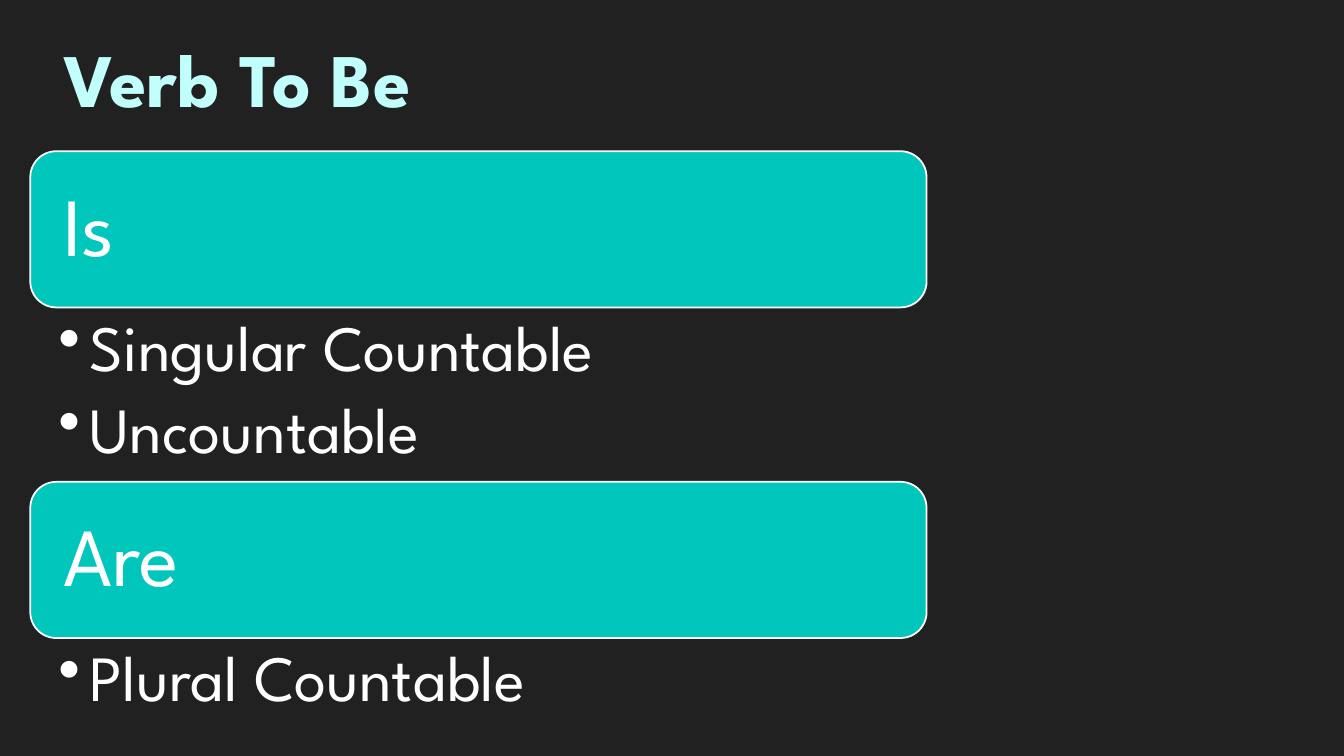
from dataclasses import dataclass

from lxml import etree
from pptx import Presentation
from pptx.dml.color import RGBColor
from pptx.enum.shapes import MSO_SHAPE
from pptx.enum.text import MSO_ANCHOR, MSO_AUTO_SIZE, PP_ALIGN
from pptx.oxml.ns import qn
from pptx.util import Inches, Pt

ROUNDED = MSO_SHAPE.ROUNDED_RECTANGLE
MIDDLE, TOP = MSO_ANCHOR.MIDDLE, MSO_ANCHOR.TOP
FIT_SHAPE = MSO_AUTO_SIZE.SHAPE_TO_FIT_TEXT
CENTER, LEFT_ALIGN = PP_ALIGN.CENTER, PP_ALIGN.LEFT

COLORS = {"background": "212121", "teal": "00C6BB", "mint": "C1FFFC", "white": "FFFFFF"}
FONT = "League Spartan"
LEFT, WIDTH, FIRST_TOP = 0.3, 8.89, 1.5
HEADING_HEIGHT = 1.55
BULLET_INDENT = 0.31


@dataclass
class VerbForm:
    heading: str
    uses: list[str]
    uses_height: float


VERB_FORMS = [
    VerbForm("Is", ["Singular Countable", "Uncountable"], 1.73),
    VerbForm("Are", ["Plural Countable"], 1.07),
]


def color(name: str) -> RGBColor:
    return RGBColor.from_string(COLORS[name])


def add_run(paragraph, text: str, size: float, color_name: str, bold: bool = False) -> None:
    run = paragraph.add_run()
    run.text = text
    run.font.name = FONT
    run.font.size = Pt(size)
    run.font.bold = bold
    run.font.color.rgb = color(color_name)


def set_insets(frame, left: float, top: float, right: float, bottom: float) -> None:
    frame.margin_left, frame.margin_top = Inches(left), Inches(top)
    frame.margin_right, frame.margin_bottom = Inches(right), Inches(bottom)


def set_spacing(paragraph, after_percent: int) -> None:
    paragraph.alignment = LEFT_ALIGN
    paragraph.line_spacing = 0.9
    after = etree.SubElement(paragraph._p.get_or_add_pPr(), qn("a:spcAft"))
    etree.SubElement(after, qn("a:spcPct"), val=str(after_percent * 1000))


def set_bullet(paragraph) -> None:
    properties = paragraph._p.get_or_add_pPr()
    properties.set("marL", str(Inches(BULLET_INDENT)))
    properties.set("indent", str(-Inches(BULLET_INDENT)))
    etree.SubElement(properties, qn("a:buChar"), char="•")


def add_title(slide, text: str) -> None:
    title = slide.shapes.add_textbox(Inches(LEFT), Inches(0.27), Inches(4.11), Inches(1.01))
    frame = title.text_frame
    frame.word_wrap = False
    frame.auto_size = FIT_SHAPE
    frame.paragraphs[0].alignment = CENTER
    add_run(frame.paragraphs[0], text, 54, "mint", bold=True)


def add_heading(slide, text: str, top: float) -> None:
    heading = slide.shapes.add_shape(
        ROUNDED, Inches(LEFT), Inches(top), Inches(WIDTH), Inches(HEADING_HEIGHT)
    )
    heading.shadow.inherit = False
    heading.fill.solid()
    heading.fill.fore_color.rgb = color("teal")
    heading.line.color.rgb = color("white")
    heading.line.width = Pt(1.25)
    frame = heading.text_frame
    frame.word_wrap = True
    frame.vertical_anchor = MIDDLE
    set_insets(frame, 0.25, 0.25, 0.25, 0.25)
    set_spacing(frame.paragraphs[0], 35)
    add_run(frame.paragraphs[0], text, 59, "white")


def add_uses(slide, uses: list[str], top: float, height: float) -> None:
    listing = slide.shapes.add_textbox(Inches(LEFT), Inches(top), Inches(WIDTH), Inches(height))
    frame = listing.text_frame
    frame.word_wrap = True
    frame.vertical_anchor = TOP
    set_insets(frame, 0.28, 0.08, 0.46, 0.08)
    for index, use in enumerate(uses):
        paragraph = frame.add_paragraph() if index else frame.paragraphs[0]
        paragraph.level = 1
        set_spacing(paragraph, 20)
        set_bullet(paragraph)
        add_run(paragraph, use, 46, "white")


def main() -> None:
    """Build the slide on the forms of the verb to be."""
    presentation = Presentation()
    presentation.slide_width, presentation.slide_height = Inches(13.33), Inches(7.5)
    slide = presentation.slides.add_slide(presentation.slide_layouts[6])
    slide.background.fill.solid()
    slide.background.fill.fore_color.rgb = color("background")

    add_title(slide, "Verb To Be")
    top = FIRST_TOP
    for form in VERB_FORMS:
        add_heading(slide, form.heading, top)
        top += HEADING_HEIGHT
        add_uses(slide, form.uses, top, form.uses_height)
        top += form.uses_height

    presentation.save("out.pptx")


if __name__ == "__main__":
    main()
